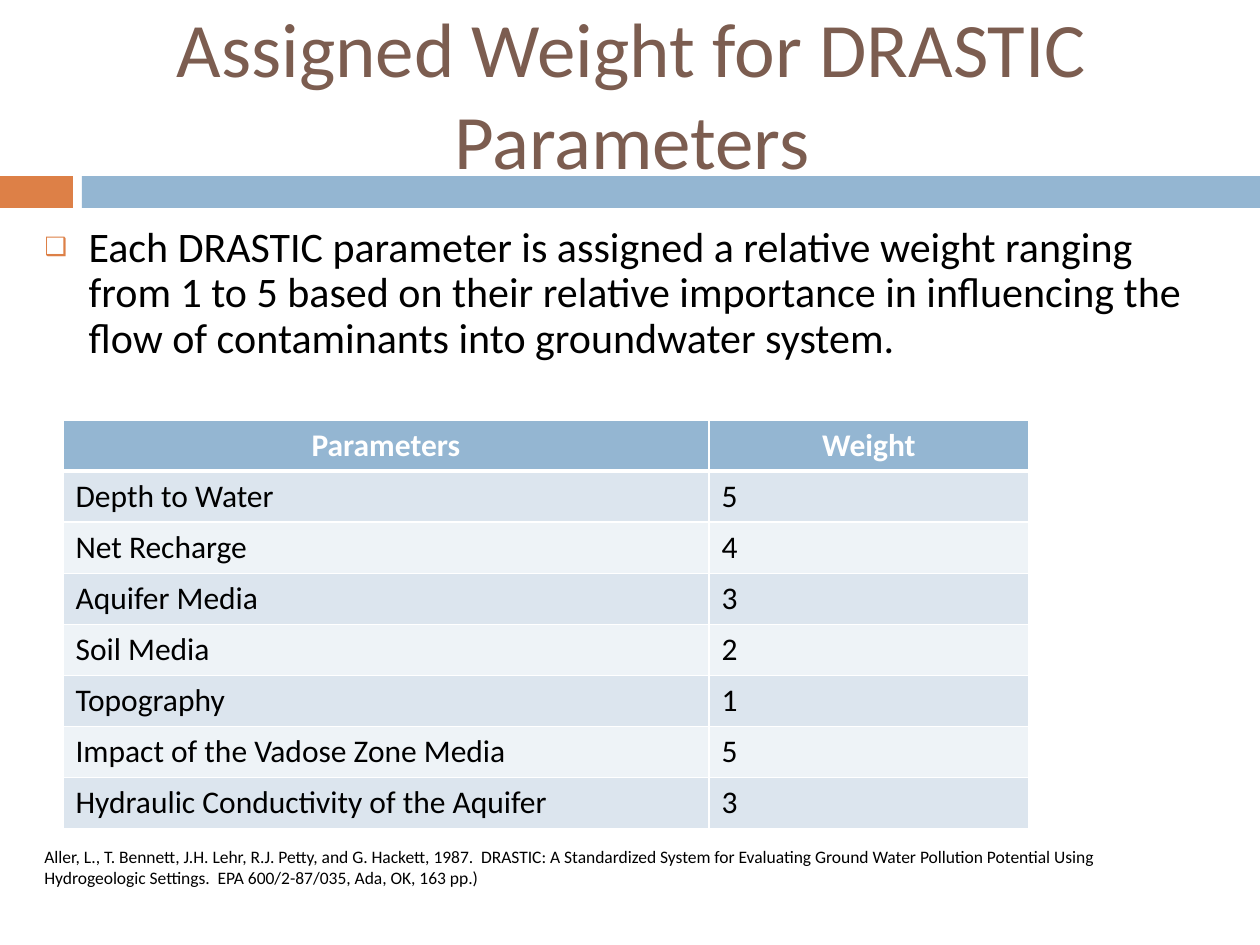
"""Build the slide on the weights assigned to DRASTIC parameters."""
from dataclasses import dataclass

from lxml.etree import SubElement
from pptx import Presentation
from pptx.dml.color import RGBColor as RGB
from pptx.enum.shapes import MSO_SHAPE as SHAPE
from pptx.enum.text import MSO_ANCHOR as ANCHOR, MSO_AUTO_SIZE as AUTO, PP_ALIGN as ALIGN
from pptx.oxml import parse_xml
from pptx.oxml.ns import nsdecls, qn
from pptx.util import Emu, Pt

EMU_PER_PX = 914400 / 126
FONT = "Calibri"
COLORS = {
    "accent": "DD8047",
    "blue": "94B6D2",
    "title": "7C5D50",
    "text": "000000",
    "white": "FFFFFF",
    "band_dark": "DCE5EE",
    "band_light": "EEF3F7",
}
COL_WIDTHS = (646, 320)
ROW_HEIGHT = 51


@dataclass(frozen=True)
class Box:
    x: int
    y: int
    w: int
    h: int

    def emu(self) -> tuple[Emu, ...]:
        return tuple(px(v) for v in (self.x, self.y, self.w, self.h))


@dataclass(frozen=True)
class Bar:
    box: Box
    color: str


@dataclass(frozen=True)
class Parameter:
    name: str
    weight: int


BARS = (
    Bar(Box(0, 176, 73, 32), "accent"),
    Bar(Box(82, 176, 1178, 32), "blue"),
)
PARAMETERS = (
    Parameter("Depth to Water", 5),
    Parameter("Net Recharge", 4),
    Parameter("Aquifer Media", 3),
    Parameter("Soil Media", 2),
    Parameter("Topography", 1),
    Parameter("Impact of the Vadose Zone Media", 5),
    Parameter("Hydraulic Conductivity of the Aquifer", 3),
)
TITLE = "Assigned Weight for DRASTIC Parameters"
STATEMENT = (
    "Each DRASTIC parameter is assigned a relative weight ranging from 1 to 5 based on "
    "their relative importance in influencing the flow of contaminants into groundwater system."
)
CITATION = (
    "Aller, L., T. Bennett, J.H. Lehr, R.J. Petty, and G. Hackett, 1987.  DRASTIC: "
    "A Standardized System for Evaluating Ground Water Pollution Potential Using "
    "Hydrogeologic Settings.  EPA 600/2-87/035, Ada, OK, 163 pp.)"
)


def px(value: int) -> Emu:
    return Emu(round(value * EMU_PER_PX))


def rgb(name: str) -> RGB:
    return RGB.from_string(COLORS[name])


def write(tf, text: str, *, size: int, color: str = "text", bold: bool = False,
          align=ALIGN.LEFT, anchor=ANCHOR.TOP):
    tf.word_wrap = True
    tf.auto_size = AUTO.NONE
    tf.vertical_anchor = anchor
    p = tf.paragraphs[0]
    p.alignment = align
    r = p.add_run()
    r.text = text
    r.font.name, r.font.size, r.font.bold = FONT, Pt(size), bold
    r.font.color.rgb = rgb(color)
    return p


def place(sp, box: Box) -> None:
    sp.left, sp.top, sp.width, sp.height = box.emu()


def add_bullet(p, char: str, color: str, percent: int, indent: int) -> None:
    pPr = p._p.get_or_add_pPr()
    pPr.set("marL", str(px(indent)))
    pPr.set("indent", str(-px(indent)))
    clr = SubElement(pPr, qn("a:buClr"))
    SubElement(clr, qn("a:srgbClr"), val=COLORS[color])
    SubElement(pPr, qn("a:buSzPct"), val=str(percent * 1000))
    SubElement(pPr, qn("a:buChar"), char=char)


def add_bar(s, bar: Bar) -> None:
    sp = s.shapes.add_shape(SHAPE.RECTANGLE, *bar.box.emu())
    sp.shadow.inherit = False
    sp.fill.solid()
    sp.fill.fore_color.rgb = rgb(bar.color)
    sp.line.fill.background()


def set_borders(cell, top: int, bottom: int) -> None:
    tcPr = cell._tc.get_or_add_tcPr()
    for i, (side, width) in enumerate(zip("LRTB", (1, 1, top, bottom))):
        tcPr.insert(i, parse_xml(
            f'<a:ln{side} {nsdecls("a")} w="{Pt(width)}"><a:solidFill>'
            f'<a:srgbClr val="{COLORS["white"]}"/></a:solidFill></a:ln{side}>'))


def fill_cell(cell, text: str, row: int) -> None:
    header = row == 0
    cell.fill.solid()
    cell.fill.fore_color.rgb = rgb(
        "blue" if header else "band_dark" if row % 2 else "band_light")
    p = cell.text_frame.paragraphs[0]
    p.alignment = ALIGN.CENTER if header else ALIGN.LEFT
    r = p.add_run()
    r.text = text
    r.font.name, r.font.size, r.font.bold = FONT, Pt(18), header
    r.font.color.rgb = rgb("white" if header else "text")
    set_borders(cell, top=3 if row == 1 else 1, bottom=3 if header else 1)


def add_weights(s, x: int, y: int) -> None:
    rows = [("Parameters", "Weight")] + [(d.name, str(d.weight)) for d in PARAMETERS]
    box = Box(x, y, sum(COL_WIDTHS), ROW_HEIGHT * len(rows))
    table = s.shapes.add_table(len(rows), len(COL_WIDTHS), *box.emu()).table
    for col, width in zip(table.columns, COL_WIDTHS):
        col.width = px(width)
    for i, texts in enumerate(rows):
        table.rows[i].height = px(ROW_HEIGHT)
        for j, text in enumerate(texts):
            fill_cell(table.cell(i, j), text, i)


def main() -> None:
    prs = Presentation()
    prs.slide_width, prs.slide_height = px(1260), px(945)
    s = prs.slides.add_slide(prs.slide_layouts[1])
    for bar in BARS:
        add_bar(s, bar)

    title, body = s.placeholders
    place(title, Box(32, 38, 1200, 110))
    write(title.text_frame, TITLE, size=44, color="title",
          align=ALIGN.CENTER, anchor=ANCHOR.MIDDLE)

    add_weights(s, 63, 420)

    place(body, Box(32, 220, 1166, 197))
    p = write(body.text_frame, STATEMENT, size=24)
    p.line_spacing, p.space_before = 0.9, Pt(7)
    add_bullet(p, "❑", "accent", percent=60, indent=44)

    citation = s.shapes.add_textbox(*Box(32, 840, 1092, 55).emu())
    write(citation.text_frame, CITATION, size=10)
    prs.save("out.pptx")


if __name__ == "__main__":
    main()
